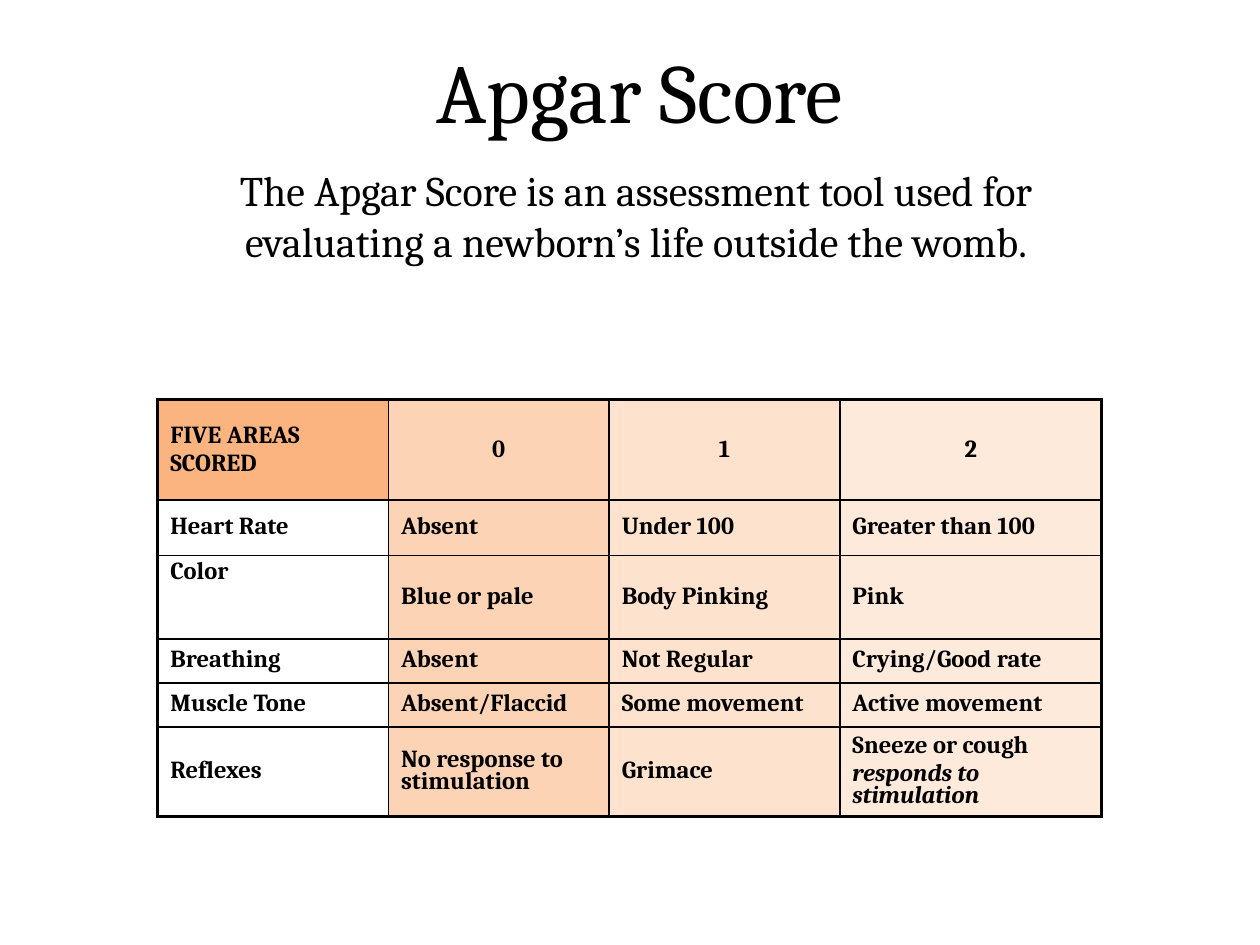
from lxml import etree
from pptx import Presentation
from pptx import util as u
from pptx.dml.color import RGBColor
from pptx.enum import text
from pptx.oxml import ns

FONT = "Cambria"
BLACK = RGBColor(0x00, 0x00, 0x00)
HEADER = RGBColor(0xFB, 0xB4, 0x80)
SCORE_TINTS = [RGBColor(0xFA, 0xA8, 0x6A), RGBColor(0xFC, 0xC6, 0x9E),
               RGBColor(0xFD, 0xD6, 0xB9)]

TITLE = "Apgar Score"
INTRO = ["The Apgar Score is an assessment tool used for",
         "evaluating a newborn’s life outside the womb."]
SCORES = [
    ["FIVE AREAS SCORED", "0", "1", "2"],
    ["Heart Rate", "Absent", "Under 100", "Greater than 100"],
    ["Color", "Blue or pale", "Body Pinking", "Pink"],
    ["Breathing", "Absent", "Not Regular", "Crying/Good rate"],
    ["Muscle Tone", "Absent/Flaccid", "Some movement", "Active movement"],
    ["Reflexes", "No response to stimulation", "Grimace",
     "Sneeze or cough\nresponds to stimulation"],
]
COL_WIDTHS = [4.65, 4.45, 4.65, 5.28]
ROW_HEIGHTS = [2.03, 1.12, 1.68, 0.89, 0.89, 1.8]
THIN, THICK = 1, 2.25


def style(p, size, bold=False):
    p.font.name, p.font.size, p.font.bold = FONT, u.Pt(size), bold
    p.font.color.rgb = BLACK


def add_heading(slide, box, lines, size, spacing=1.0):
    sp = slide.shapes.add_textbox(*(u.Cm(v) for v in box))
    tf = sp.text_frame
    tf.word_wrap = True
    tf.vertical_anchor = text.MSO_ANCHOR.MIDDLE
    p = tf.paragraphs[0]
    for i, line in enumerate(lines):
        if i:
            p.add_line_break()
        p.add_run().text = line
    p.alignment = text.PP_ALIGN.CENTER
    p.line_spacing = spacing
    style(p, size)


def fill_cell(cell, row, col):
    if row and not col:
        cell.fill.background()
        return
    cell.fill.solid()
    cell.fill.fore_color.rgb = SCORE_TINTS[col - 1] if col else HEADER
    if col:  # score columns are half transparent
        clr = cell._tc.tcPr.find(".//" + ns.qn("a:srgbClr"))
        etree.SubElement(clr, ns.qn("a:alpha"), val="50000")


def set_borders(cell, widths):
    for i, (side, width) in enumerate(widths.items()):
        ln = etree.Element(ns.qn("a:ln" + side), w=str(u.Pt(width)))
        fill = etree.SubElement(ln, ns.qn("a:solidFill"))
        etree.SubElement(fill, ns.qn("a:srgbClr"), val=str(BLACK))
        cell._tc.tcPr.insert(i, ln)


def add_scores(slide):
    n_rows, n_cols = len(SCORES), len(COL_WIDTHS)
    table = slide.shapes.add_table(
        n_rows, n_cols, u.Cm(3.18), u.Cm(8.05),
        u.Cm(sum(COL_WIDTHS)), u.Cm(sum(ROW_HEIGHTS))).table
    table.first_row = table.horz_banding = False
    for column, width in zip(table.columns, COL_WIDTHS):
        column.width = u.Cm(width)
    for line, height in zip(table.rows, ROW_HEIGHTS):
        line.height = u.Cm(height)

    for row, words in enumerate(SCORES):
        for col, word in enumerate(words):
            cell = table.cell(row, col)
            cell.text = word
            cell.vertical_anchor = (text.MSO_ANCHOR.TOP if word == "Color"
                                    else text.MSO_ANCHOR.MIDDLE)
            for i, p in enumerate(cell.text_frame.paragraphs):
                style(p, 14, bold=True)
                if row:
                    p.line_spacing = 0.8
                elif col:
                    p.alignment = text.PP_ALIGN.CENTER
                if i:  # second line of an answer
                    p.space_before = u.Pt(2.8)
                    p.font.italic = True
            fill_cell(cell, row, col)
            # Thick outer frame, thin inner grid
            set_borders(cell, {
                "L": THICK if col == 0 else THIN,
                "R": THICK if col == n_cols - 1 else THIN,
                "T": THICK if row == 0 else THIN,
                "B": THICK if row == n_rows - 1 else THIN,
            })


def main():
    prs = Presentation()
    prs.slide_width, prs.slide_height = u.Cm(25.4), u.Cm(19.05)
    slide = prs.slides.add_slide(prs.slide_layouts[6])
    add_heading(slide, (3.05, 1.19, 19.69, 1.73), [TITLE], 48, spacing=0.7)
    add_heading(slide, (2.34, 3.18, 20.96, 2.31), INTRO, 24)
    add_scores(slide)
    prs.save("out.pptx")


if __name__ == "__main__":
    main()
